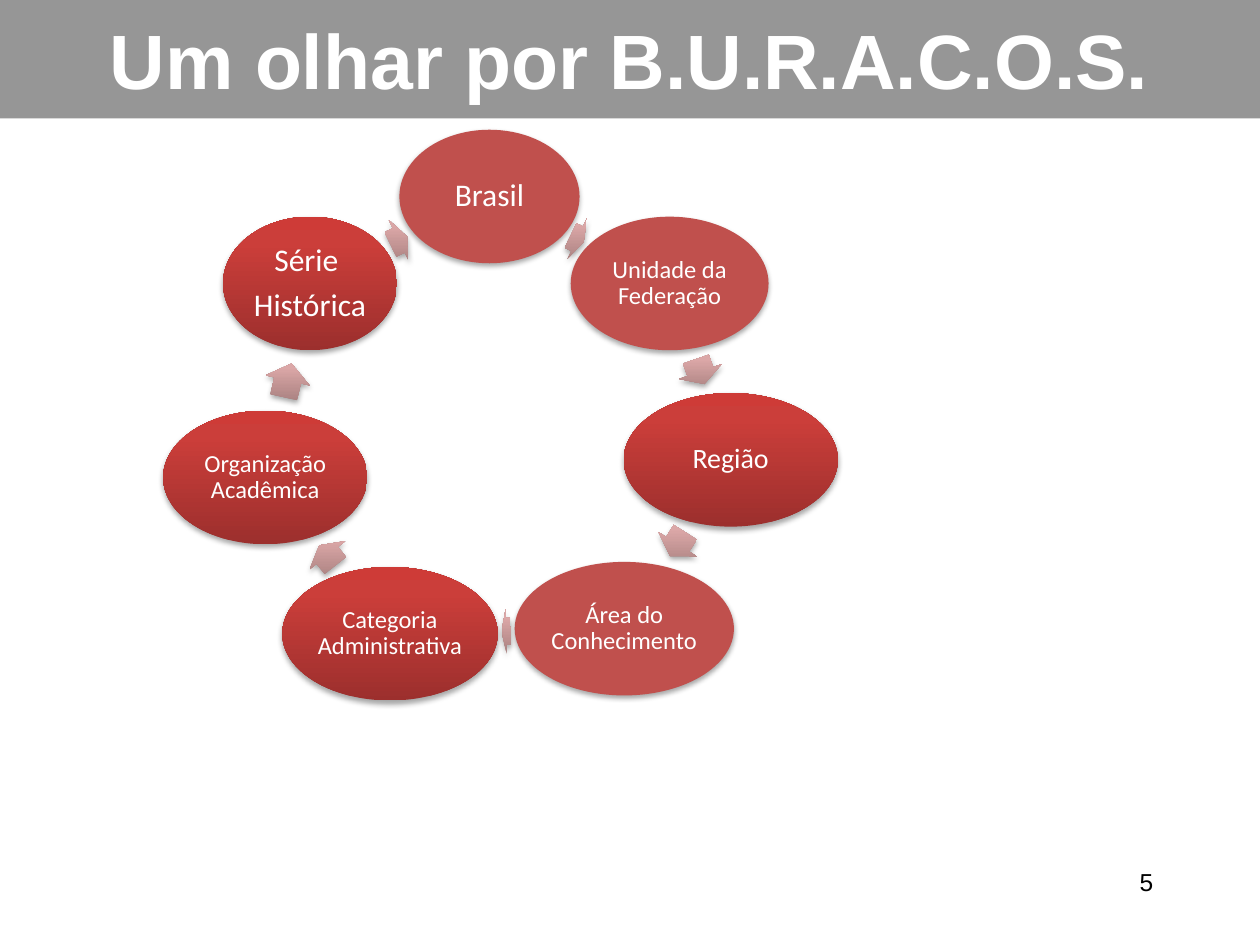
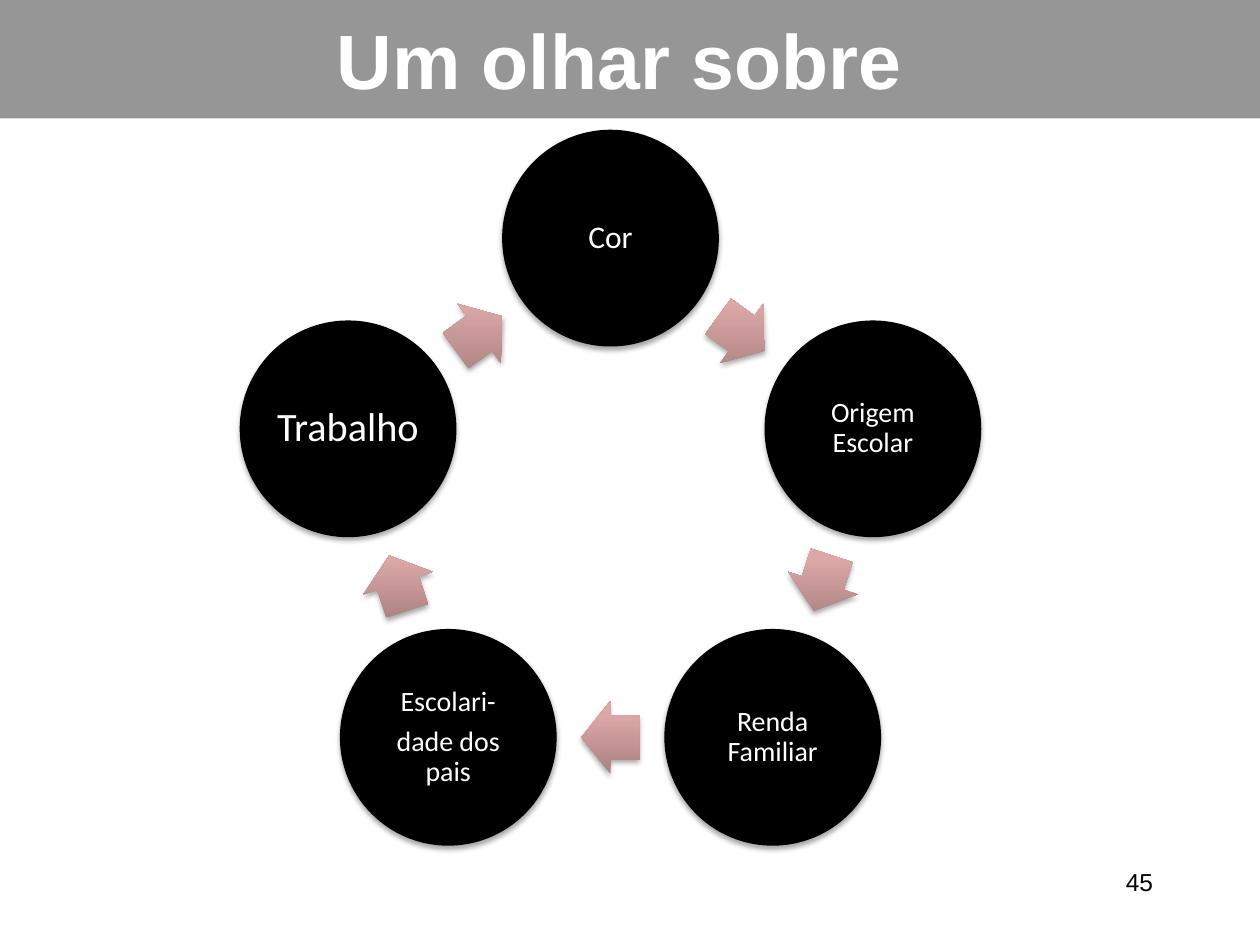
from collections import namedtuple
from itertools import chain
from math import atan2, cos, degrees, hypot, pi, sin

from lxml.etree import SubElement as Sub
from pptx import Presentation
from pptx.dml.color import RGBColor
from pptx.enum.shapes import MSO_SHAPE as Kind
from pptx.enum.text import MSO_ANCHOR as Anchor, PP_ALIGN as Align
from pptx.oxml.ns import qn
from pptx.util import Inches, Pt

COLS, ROWS = 100, 75
UNIT = Inches(0.1)
WHITE = RGBColor(0xFF, 0xFF, 0xFF)
BLACK = RGBColor(0x00, 0x00, 0x00)
GRAY = RGBColor(0x96, 0x96, 0x96)
BRICK = RGBColor(0xC0, 0x50, 0x4D)
REDS = (
    (0, RGBColor(0x9C, 0x2F, 0x2D)),
    (80, RGBColor(0xCB, 0x3E, 0x3A)),
    (100, RGBColor(0xCE, 0x3B, 0x37)),
)
PINKS = (
    (0, RGBColor(0xA9, 0x81, 0x80)),
    (80, RGBColor(0xDB, 0xA7, 0xA7)),
    (100, RGBColor(0xDD, 0xA7, 0xA6)),
)
ARROW_SHARE = 0.54

Node = namedtuple("Node", "text size x y wide high fill")


def grid(*cells):
    """Turn grid cells into lengths."""
    return [round(cell * UNIT) for cell in cells]


def write(frame, text, size, font, color, align, bold=False):
    """Write one paragraph per line of text."""
    frame.word_wrap = True
    frame.text = text
    for para in frame.paragraphs:
        para.alignment = align
        para.font.size = Pt(size)
        para.font.name = font
        para.font.bold = bold
        para.font.color.rgb = color


def blend(shape, stops):
    """Fill a shape with an upright gradient, darkest at its foot."""
    props = shape.element.spPr
    grad = Sub(props, qn("a:gradFill"), rotWithShape="0")
    items = Sub(grad, qn("a:gsLst"))
    for share, color in stops:
        stop = Sub(items, qn("a:gs"), pos=str(share * 1000))
        Sub(stop, qn("a:srgbClr"), val=str(color))
    Sub(grad, qn("a:lin"), ang="16200000", scaled="0")
    props.find(qn("a:ln")).addprevious(grad)


def shade(shape):
    """Give a shape a soft shadow below it."""
    effects = Sub(shape.element.spPr, qn("a:effectLst"))
    outer = Sub(effects, qn("a:outerShdw"), blurRad=str(Pt(3.1)),
                dist=str(Pt(1.8)), dir="5400000", rotWithShape="0")
    color = Sub(outer, qn("a:srgbClr"), val=str(BLACK))
    Sub(color, qn("a:alpha"), val="35000")


def paint(shape, fill):
    """Paint a shape without a line, in one colour or a gradient."""
    shape.line.fill.background()
    if isinstance(fill, RGBColor):
        shape.fill.solid()
        shape.fill.fore_color.rgb = fill
    else:
        blend(shape, fill)


def centred(shapes, kind, x, y, wide, high, fill):
    """Add a shaded shape around a centre."""
    shape = shapes.add_shape(
        kind, *grid(x - wide / 2, y - high / 2, wide, high))
    paint(shape, fill)
    shade(shape)
    return shape


def bubble(shapes, node):
    """Add one labelled ellipse of a ring."""
    shape = centred(shapes, Kind.OVAL, *node[2:])
    frame = shape.text_frame
    frame.margin_left = frame.margin_right = Inches(0.02)
    frame.margin_top = frame.margin_bottom = Inches(0.02)
    write(frame, node.text, node.size, "Calibri", WHITE, Align.CENTER)
    for para in frame.paragraphs:
        para.line_spacing = 0.9
        para.space_after = Pt(0.35 * node.size)


def reach(node, turn):
    """Return the distance from a node's centre to its edge."""
    return 0.5 / hypot(cos(turn) / node.wide, sin(turn) / node.high)


def arrow(shapes, start, end, high):
    """Add a block arrow in the gap between two nodes."""
    across, down = end.x - start.x, end.y - start.y
    turn = atan2(down, across)
    near = reach(start, turn)
    gap = hypot(across, down) - near - reach(end, turn)
    mid = near + gap / 2
    shape = centred(shapes, Kind.RIGHT_ARROW, start.x + mid * cos(turn),
                    start.y + mid * sin(turn), gap * ARROW_SHARE, high, PINKS)
    shape.adjustments[0], shape.adjustments[1] = 0.6, 0.5
    shape.rotation = degrees(turn) % 360


def ring(slide, nodes, high):
    """Add a closed cycle of nodes and arrows as a group."""
    shapes = slide.shapes.add_group_shape().shapes
    for node, after in zip(nodes, chain(nodes[1:], nodes[:1])):
        bubble(shapes, node)
        arrow(shapes, node, after, high)


def page(deck, title, number):
    """Add a slide with its title band and page number."""
    slide = deck.slides.add_slide(deck.slide_layouts[6])
    foot = slide.shapes.add_textbox(*grid(71.7, 68.3, 20.8, 5))
    write(foot.text_frame, number, 14, "Arial", BLACK, Align.RIGHT)
    band = slide.shapes.add_shape(Kind.RECTANGLE, *grid(0, 0, COLS, 9.4))
    band.shadow.inherit = False
    paint(band, GRAY)
    band.text_frame.vertical_anchor = Anchor.MIDDLE
    write(band.text_frame, title, 44, "Arial", WHITE, Align.CENTER, True)
    return slide


def survey(deck):
    """Build the slide with the seven views."""
    views = (
        ("Brasil", 18, 38.85, 15.6, 14.3, BRICK),
        ("Unidade da Federação", 14, 53.15, 22.5, 15.7, BRICK),
        ("Região", 16, 58, 36.5, 17, REDS),
        ("Área do Conhecimento", 14, 49.55, 49.9, 17.4, BRICK),
        ("Categoria Administrativa", 14, 30.95, 50.3, 17.1, REDS),
        ("Organização Acadêmica", 14, 21.05, 37.9, 16.2, REDS),
        ("Série \nHistórica", 18, 24.6, 22.5, 13.8, REDS),
    )
    nodes = [Node(*view[:5], 10.6, view[5]) for view in views]
    ring(page(deck, "Um olhar por B.U.R.A.C.O.S.", "5"), nodes, 3.6)


def profile(deck):
    """Build the slide with the five student traits."""
    traits = (
        ("Cor", 18),
        ("Origem Escolar", 16),
        ("Renda Familiar", 16),
        ("Escolari-\ndade dos pais", 16),
        ("Trabalho", 23),
    )
    mid, level, radius, wide = 48.45, 40.8, 21.9, 17.2
    nodes = []
    for step, (text, size) in enumerate(traits):
        turn = 2 * pi * step / len(traits)
        nodes.append(Node(text, size, mid + radius * sin(turn),
                          level - radius * cos(turn), wide, wide, BLACK))
    ring(page(deck, "Um olhar sobre ", "45"), nodes, 5.8)


def main():
    """Build and save the deck."""
    deck = Presentation()
    deck.slide_width, deck.slide_height = grid(COLS, ROWS)
    survey(deck)
    profile(deck)
    deck.save("out.pptx")


if __name__ == "__main__":
    main()
